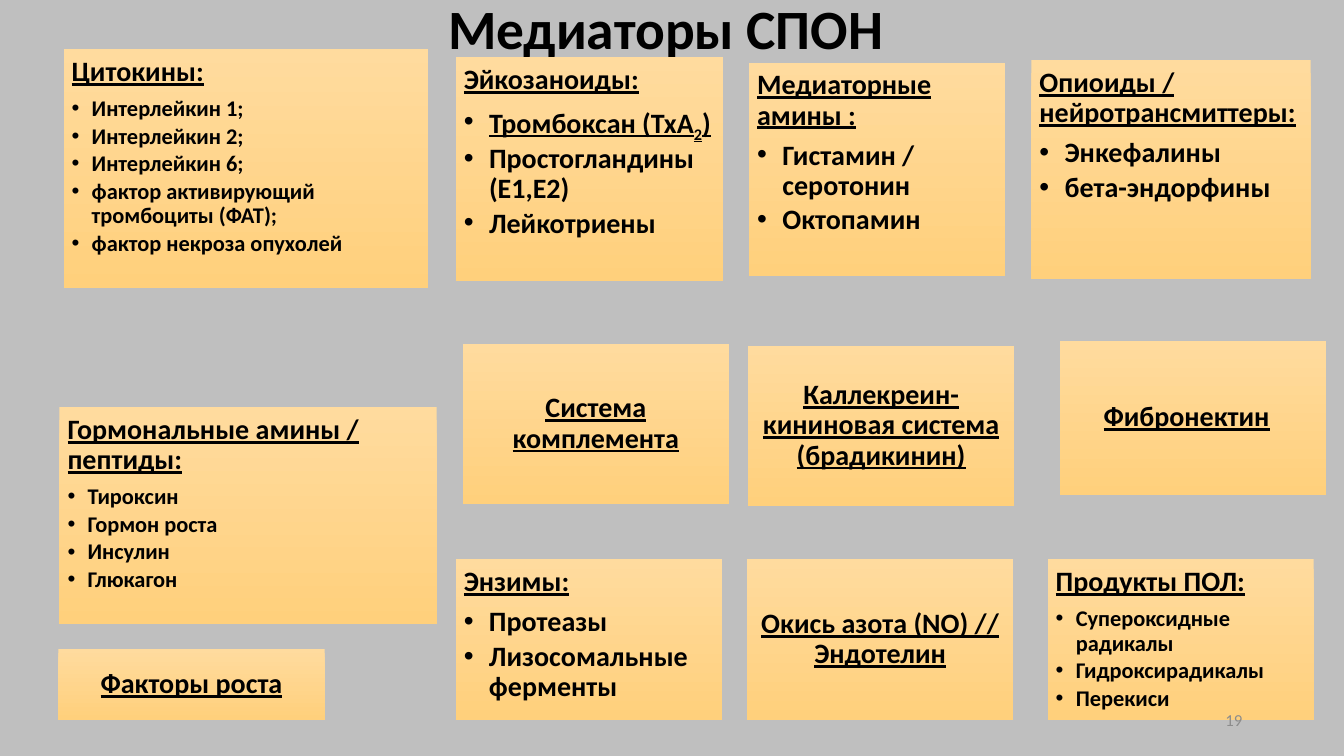
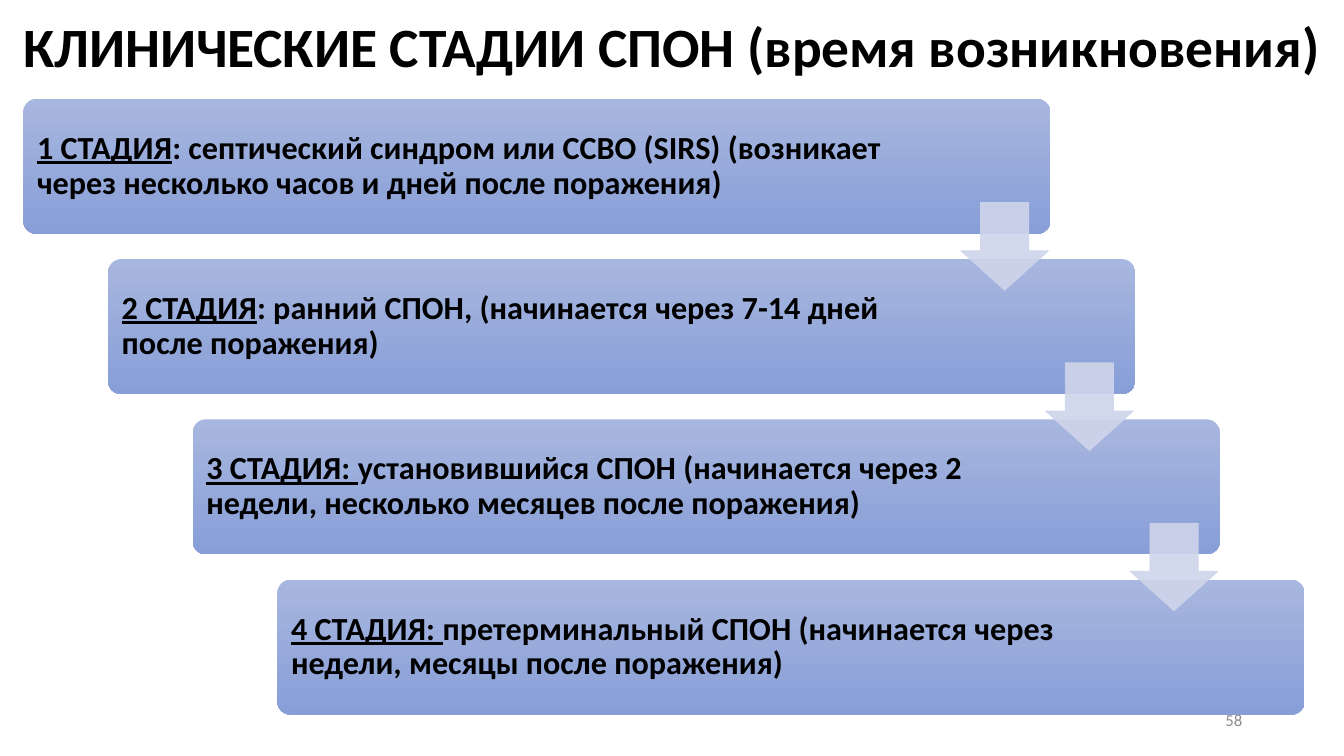
from dataclasses import dataclass

from lxml import etree
from pptx import Presentation
from pptx import util as u
from pptx.dml.color import RGBColor
from pptx.enum import shapes, text
from pptx.oxml.ns import qn

I = u.Inches
LEFT, CENTER, RIGHT = (text.PP_ALIGN.LEFT, text.PP_ALIGN.CENTER,
                       text.PP_ALIGN.RIGHT)
TOP, MIDDLE = text.MSO_ANCHOR.TOP, text.MSO_ANCHOR.MIDDLE
TITLE_ONLY = 5


@dataclass(frozen=True)
class Theme:
    font: str = "Calibri"
    ink: str = "000000"
    muted: str = "8C8C8C"
    grey: str = "BFBFBF"
    white: str = "FFFFFF"
    card: tuple = ("FFDB9E", "FFD07C")
    stage: tuple = ("A8B7DF", "889ED7")
    arrow: str = "CFD5EA"
    title: float = 39.6
    stage_text: int = 23
    heading: int = 20
    small: int = 16
    number: int = 12


T = Theme()


# Text
def add_text(p, words, size, color=T.ink, bold=True, underline=False, sub=False):
    r = p.add_run()
    r.text = words
    f = r.font
    f.name, f.size, f.bold, f.underline = T.font, u.Pt(size), bold, underline
    f.color.rgb = RGBColor.from_string(color)
    if sub:
        r._r.get_or_add_rPr().set("baseline", "-25000")
    return r


def set_paragraph(p, align=LEFT, after=0.0, bullet=None):
    if bullet:
        pPr = p._p.get_or_add_pPr()
        pPr.set("marL", str(I(bullet)))
        pPr.set("indent", str(-I(bullet)))
        etree.SubElement(pPr, qn("a:buFont")).set("typeface", "Arial")
        etree.SubElement(pPr, qn("a:buChar")).set("char", "•")
    p.alignment, p.line_spacing = align, 0.9
    p.space_before, p.space_after = u.Pt(0), u.Pt(after)


def set_frame(tf, anchor, insets):
    tf.word_wrap, tf.auto_size = True, text.MSO_AUTO_SIZE.NONE
    tf.vertical_anchor = anchor
    (tf.margin_left, tf.margin_top,
     tf.margin_right, tf.margin_bottom) = map(I, insets)


# Shapes
def add_panel(s, kind, box, colors):
    sp = s.shapes.add_shape(kind, *map(I, box))
    sp.shadow.inherit = False
    sp.line.fill.background()
    sp.fill.gradient()
    sp.fill.gradient_angle = 270
    for stop, color in zip(sp.fill.gradient_stops, colors):
        stop.color.rgb = RGBColor.from_string(color)
    return sp


def add_slide(prs, background, title, title_box):
    s = prs.slides.add_slide(prs.slide_layouts[TITLE_ONLY])
    s.background.fill.solid()
    s.background.fill.fore_color.rgb = RGBColor.from_string(background)
    sp = s.shapes.title
    sp.left, sp.top, sp.width, sp.height = map(I, title_box)
    set_frame(sp.text_frame, MIDDLE, (0.1, 0.05, 0.1, 0.05))
    p = sp.text_frame.paragraphs[0]
    set_paragraph(p, CENTER)
    add_text(p, title, T.title)
    return s


def add_number(s, number):
    """Slide number, added last so that it lies over the panels."""
    tf = s.shapes.add_textbox(*map(I, (9.42, 6.94, 3, 0.4))).text_frame
    set_frame(tf, MIDDLE, (0.1, 0.05, 0.1, 0.05))
    p = tf.paragraphs[0]
    p.alignment = RIGHT
    add_text(p, number, T.number, T.muted, bold=False)


# Mediators
def add_card(s, box, heading, items=(), size=T.heading, right=0.08):
    sp = add_panel(s, shapes.MSO_SHAPE.RECTANGLE, box, T.card)
    tf = sp.text_frame
    set_frame(tf, TOP if items else MIDDLE, (0.08, 0.08, right, 0.08))
    p = tf.paragraphs[0]
    set_paragraph(p, LEFT if items else CENTER, after=T.heading * 0.35)
    add_text(p, heading, T.heading, underline=True)
    for item in items:
        p = tf.add_paragraph()
        set_paragraph(p, after=size * 0.15, bullet=size / 80)
        runs = [(item, {})] if isinstance(item, str) else item
        for words, fmt in runs:
            add_text(p, words, size, **fmt)


THROMBOXANE = [("Тромбоксан (ТхА", {"underline": True}),
               ("2", {"underline": True, "sub": True}),
               (")", {"underline": True})]

CARDS = [
    dict(box=(0.63, 0.49, 3.62, 2.37), heading="Цитокины:", size=T.small,
         items=["Интерлейкин 1;", "Интерлейкин 2;", "Интерлейкин 6;",
                "фактор активирующий тромбоциты (ФАТ);",
                "фактор некроза опухолей"]),
    dict(box=(4.52, 0.57, 2.65, 2.22), heading="Эйкозаноиды:",
         items=[THROMBOXANE, "Простогландины (Е1,Е2)", "Лейкотриены"]),
    dict(box=(7.43, 0.62, 2.54, 2.12), heading="Медиаторные амины :",
         items=["Гистамин / серотонин", "Октопамин"]),
    dict(box=(10.23, 0.6, 2.77, 2.17), heading="Опиоиды / нейротрансмиттеры:",
         items=["Энкефалины", "бета-эндорфины"]),
    dict(box=(0.59, 4.04, 3.74, 2.15), heading="Гормональные амины / пептиды:",
         size=T.small,
         items=["Тироксин", "Гормон роста", "Инсулин", "Глюкагон"]),
    dict(box=(4.59, 3.41, 2.64, 1.59), heading="Система комплемента"),
    dict(box=(7.42, 3.43, 2.64, 1.59),
         heading="Каллекреин-кининовая система (брадикинин)"),
    dict(box=(10.51, 3.38, 2.64, 1.53), heading="Фибронектин", right=0.2),
    dict(box=(0.58, 6.44, 2.64, 0.7), heading="Факторы роста"),
    dict(box=(4.52, 5.55, 2.64, 1.59), heading="Энзимы:",
         items=["Протеазы", "Лизосомальные ферменты"]),
    dict(box=(7.41, 5.55, 2.64, 1.59), heading="Окись азота (NO) // Эндотелин"),
    dict(box=(10.39, 5.55, 2.64, 1.59), heading="Продукты ПОЛ:", size=T.small,
         items=["Супероксидные радикалы", "Гидроксирадикалы", "Перекиси"]),
]


def mediators_slide(prs):
    s = add_slide(prs, T.grey, "Медиаторы СПОН", (0.8, 0.11, 11.61, 0.4))
    for card in CARDS:
        add_card(s, **card)
    add_number(s, "19")


# Stages: label, description, width of the text area
STAGES = [
    ("1 СТАДИЯ", ": септический синдром или ССВО (SIRS) (возникает через "
     "несколько часов и дней после поражения)", 8.63),
    ("2 СТАДИЯ", ": ранний СПОН, (начинается через 7-14 дней после поражения)",
     8.38),
    ("3 СТАДИЯ: ", "установившийся СПОН (начинается через 2 недели, несколько "
     "месяцев после поражения)", 8.4),
    ("4 СТАДИЯ: ", "претерминальный СПОН (начинается через недели, месяцы "
     "после поражения)", 8.38),
]


def add_stage(s, box, label, words, text_width):
    sp = add_panel(s, shapes.MSO_SHAPE.ROUNDED_RECTANGLE, box, T.stage)
    sp.adjustments[0] = 0.1
    # The rounded corners already inset the text by 0.04 on each side
    set_frame(sp.text_frame, MIDDLE, (0.1, 0.1, box[2] - text_width + 0.02, 0.1))
    p = sp.text_frame.paragraphs[0]
    set_paragraph(p)
    add_text(p, label, T.stage_text, underline=True)
    add_text(p, words, T.stage_text)


def add_step_arrow(s, box):
    """Arrow from the lower right corner of a stage to the next one."""
    left, top = box[:2]
    sp = s.shapes.add_shape(shapes.MSO_SHAPE.DOWN_ARROW, I(left + 9.3),
                            I(top + 1.03), I(0.87), I(0.87))
    sp.shadow.inherit = False
    sp.adjustments[0], sp.adjustments[1] = 0.55, 0.45
    sp.line.width = u.Pt(0.5)
    for fill in (sp.fill, sp.line.fill):
        fill.solid()
        fill.fore_color.rgb = RGBColor.from_string(T.arrow)
    for color in sp._element.spPr.iter(qn("a:srgbClr")):
        etree.SubElement(color, qn("a:alpha")).set("val", "90000")


def stages_slide(prs):
    s = add_slide(prs, T.white, "КЛИНИЧЕСКИЕ СТАДИИ СПОН (время возникновения)",
                  (0, 0, 13.33, 0.98))
    boxes = [(0.23 + 0.84 * i, 0.98 + 1.59 * i, 10.19, 1.34)
             for i in range(len(STAGES))]
    for box, stage in zip(boxes, STAGES):
        add_stage(s, box, *stage)
    for box in boxes[:-1]:
        add_step_arrow(s, box)
    add_number(s, "58")


def main():
    prs = Presentation()
    prs.slide_width, prs.slide_height = I(13.33), I(7.5)
    mediators_slide(prs)
    stages_slide(prs)
    prs.save("out.pptx")


if __name__ == "__main__":
    main()
